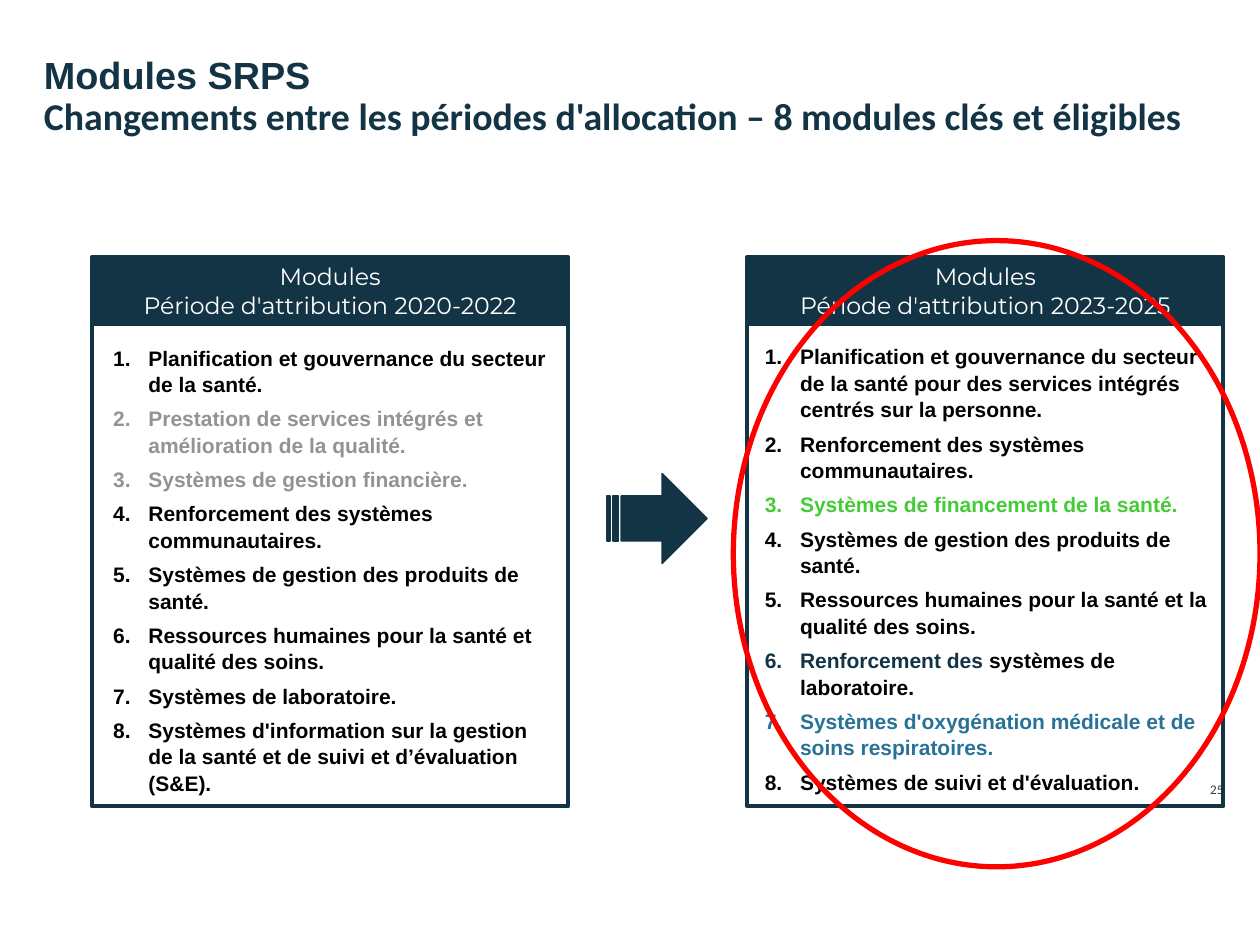
"""Build the slide comparing the SRPS modules of two allocation periods."""
from pptx import Presentation
from pptx.dml.color import RGBColor
from pptx.enum.shapes import MSO_SHAPE
from pptx.enum.text import MSO_ANCHOR, PP_ALIGN
from pptx.oxml.ns import qn
from pptx.util import Inches, Pt

THEME = {
    "navy": "133445", "black": "000000", "grey": "939393", "green": "44CC36",
    "blue": "297297", "white": "FFFFFF", "red": "FF0000", "number": "3C3D3B",
    "title": {"size": Pt(21.6), "bold": True, "name": "Arial"},
    "subtitle": {"size": Pt(21.6), "bold": True, "name": "Calibri"},
    "header": {"size": Pt(13.5), "name": "Montserrat"},
    "module": {"size": Pt(12), "bold": True, "name": "Arial"},
    "page": {"size": Pt(7.5), "name": "Calibri"},
}
ITEM_FORMAT = {"space_after": Pt(4.5), "line_spacing": 1.05}
FRAME_FORMAT = {"word_wrap": True, "vertical_anchor": MSO_ANCHOR.TOP}

PANELS = [
    (0.73, "2020-2022", (0.1, 0.05), [
        [("Planification et gouvernance du secteur de la santé.", "black")],
        [("Prestation de services intégrés et amélioration de la qualité.", "grey")],
        [("Systèmes de gestion financière.", "grey")],
        [("Renforcement des systèmes communautaires.", "black")],
        [("Systèmes de gestion des produits de santé.", "black")],
        [("Ressources humaines pour la santé et qualité des soins.", "black")],
        [("Systèmes de laboratoire.", "black")],
        [("Systèmes d'information sur la gestion de la santé et de suivi "
          "et d’évaluation (S&E).", "black")],
    ]),
    (5.93, "2023-2025", (0.07, 0.04), [
        [("Planification et gouvernance du secteur de la santé pour des "
          "services intégrés centrés sur la personne.", "black")],
        [("Renforcement des systèmes communautaires.", "black")],
        [("Systèmes de financement de la santé.", "green")],
        [("Systèmes de gestion des produits de santé.", "black")],
        [("Ressources humaines pour la santé et la qualité des soins.", "black")],
        [("Renforcement des ", "navy"), ("systèmes de laboratoire.", "black")],
        [("Systèmes d'oxygénation médicale et de soins respiratoires.", "blue")],
        [("Systèmes de suivi et d'évaluation.", "black")],
    ]),
]

presentation = Presentation()
presentation.slide_width, presentation.slide_height = Inches(10), Inches(7.5)
slide = presentation.slides.add_slide(presentation.slide_layouts[6])


def add_run(paragraph, text, style, color):
    run = paragraph.add_run()
    run.text = text
    for name, value in THEME[style].items():
        setattr(run.font, name, value)
    run.font.color.rgb = RGBColor.from_string(THEME[color])


def add_item(kind, box, margins=(0.1, 0.05), fill=None, line=None, width=1, **frame_format):
    place = [Inches(length) for length in box]
    if kind is None:
        shape = slide.shapes.add_textbox(*place)
    else:
        shape = slide.shapes.add_shape(kind, *place)
        shape.shadow.inherit = False
        shape.line.color.rgb = RGBColor.from_string(THEME[line])
        shape.line.width = Pt(width)
        if fill:
            shape.fill.solid()
            shape.fill.fore_color.rgb = RGBColor.from_string(THEME[fill])
        else:
            shape.fill.background()
    frame = shape.text_frame
    frame.margin_left = frame.margin_right = Inches(margins[0])
    frame.margin_top = frame.margin_bottom = Inches(margins[1])
    for name, value in (FRAME_FORMAT | frame_format).items():
        setattr(frame, name, value)
    return frame


page_number = add_item(None, (8.97, 6.03, 0.74, 0.3), (0, 0),
                       vertical_anchor=MSO_ANCHOR.BOTTOM).paragraphs[0]
page_number.alignment = PP_ALIGN.RIGHT
add_run(page_number, "25", "page", "number")

title = add_item(None, (0.25, 0.34, 9.45, 1.2), (0.1, 0.11)).paragraphs[0]
title.line_spacing = 0.9
add_run(title, "Modules SRPS", "title", "navy")
title.add_line_break()
add_run(title, "Changements entre les périodes d'allocation – 8 modules clés et éligibles",
        "subtitle", "navy")

add_item(MSO_SHAPE.STRIPED_RIGHT_ARROW, (4.82, 3.76, 0.79, 0.71), fill="navy", line="navy")

for left, period, margins, modules in PANELS:
    add_item(MSO_SHAPE.RECTANGLE, (left, 2.41, 3.78, 3.99), line="navy", width=2.25)
    header = add_item(MSO_SHAPE.RECTANGLE, (left, 2.04, 3.78, 0.53), fill="navy",
                      line="navy", width=2.25, vertical_anchor=MSO_ANCHOR.MIDDLE)
    for index, text in enumerate(("Modules", f"Période d'attribution {period}")):
        paragraph = header.add_paragraph() if index else header.paragraphs[0]
        paragraph.alignment = PP_ALIGN.CENTER
        add_run(paragraph, text, "header", "white")

    module_list = add_item(None, (left + 0.07, 2.68, 3.67, 3.8), margins)
    for index, parts in enumerate(modules):
        paragraph = module_list.add_paragraph() if index else module_list.paragraphs[0]
        properties = paragraph._p.get_or_add_pPr()
        properties.set("marL", str(Inches(0.28)))
        properties.set("indent", str(-Inches(0.28)))
        numbering = properties.makeelement(qn("a:buAutoNum"), {"type": "arabicPeriod"})
        properties.append(numbering)
        for name, value in ITEM_FORMAT.items():
            setattr(paragraph, name, value)
        for text, color in parts:
            add_run(paragraph, text, "module", color)

add_item(MSO_SHAPE.OVAL, (5.82, 1.91, 4.18, 4.97), line="red", width=3)

presentation.save("out.pptx")
